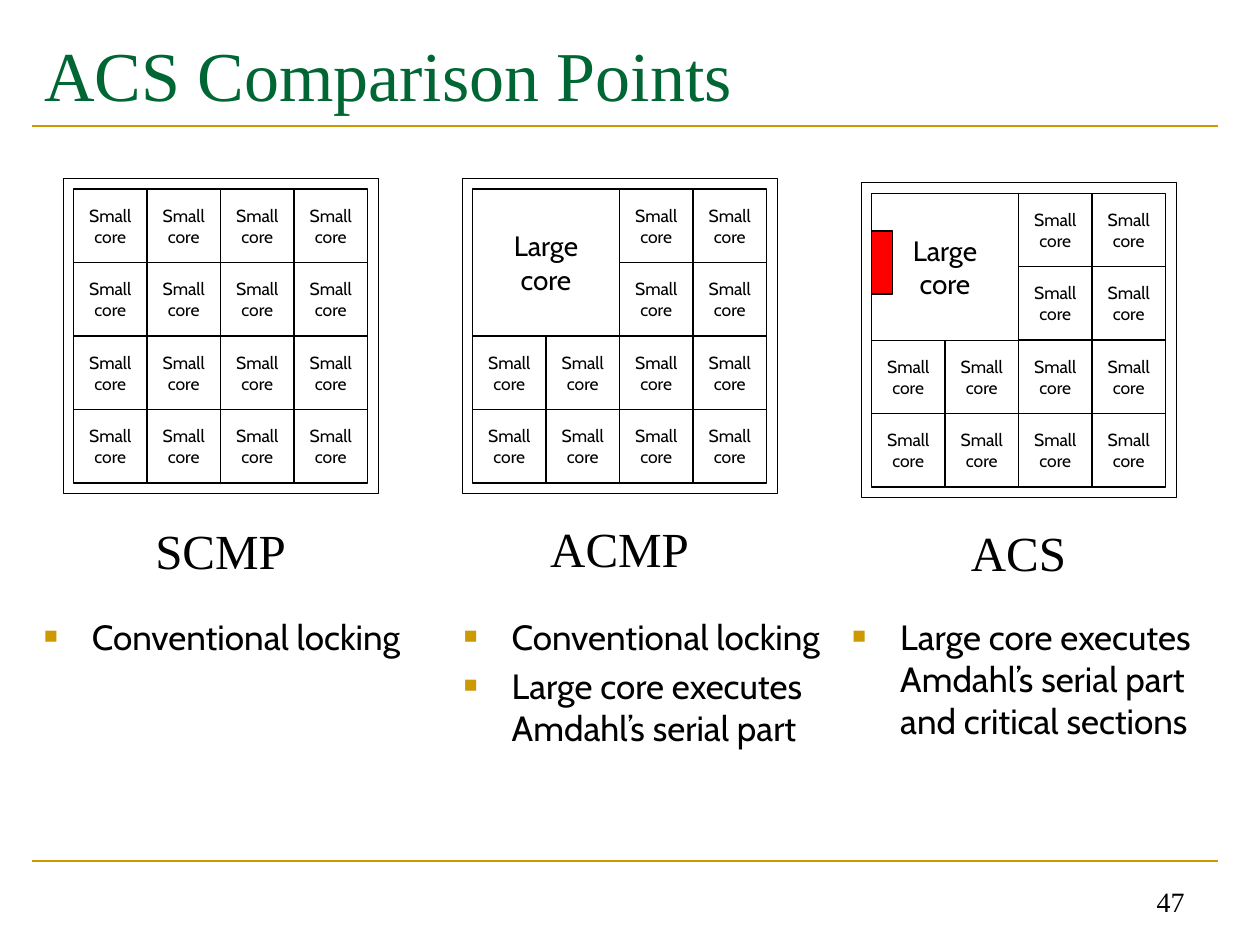
import lxml.etree
import pptx
import pptx.dml.color
import pptx.enum.shapes
import pptx.enum.text
import pptx.oxml.ns
import pptx.util

ALIGN = pptx.enum.text.PP_ALIGN
ANCHOR = pptx.enum.text.MSO_ANCHOR
RECTANGLE = pptx.enum.shapes.MSO_SHAPE.RECTANGLE
BLACK, GOLD, GREEN, WHITE, RED = "000000", "CC9900", "006633", "FFFFFF", "FF0000"
SERIF, SANS = "Times New Roman", "Cabin"
qn = pptx.oxml.ns.qn


def paint(target, color):
    """Give a fill, or the fill of a line or font, a solid hex colour."""
    fill = target if hasattr(target, "solid") else target.fill
    fill.solid()
    fill.fore_color.rgb = pptx.dml.color.RGBColor.from_string(color)


def write(shape, paragraphs, typeface, size, color=BLACK, frame_format=None, **paragraph_format):
    frame = shape.text_frame
    settings = {"word_wrap": True, "auto_size": pptx.enum.text.MSO_AUTO_SIZE.NONE,
                "vertical_anchor": ANCHOR.TOP, **(frame_format or {})}
    for name, value in settings.items():
        setattr(frame, name, value)
    for index, text in enumerate(paragraphs):
        paragraph = frame.add_paragraph() if index else frame.paragraphs[0]
        paragraph.text = text
        for name, value in paragraph_format.items():
            setattr(paragraph, name, value)
        for run in paragraph.runs:
            for name, value in {"name": typeface, "size": pptx.util.Pt(size)}.items():
                setattr(run.font, name, value)
            paint(run.font, color)


deck = pptx.Presentation()
deck.slide_width, deck.slide_height = pptx.util.Inches(10), pptx.util.Inches(7.5)
slide = deck.slides.add_slide(deck.slide_layouts[1])

# The page is a grid of 120 columns and 90 rows of square units
unit = deck.slide_width / 120
title, first_list = slide.placeholders
page_number, second_list, third_list = [
    slide.shapes.add_textbox(0, 0, 0, 0) for _ in range(3)]
text_areas = [
    (title, 3, 2, 113, 10),
    (page_number, 86, 82, 28, 6),
    (first_list, 3, 58, 37, 23.25),
    (second_list, 43, 58, 37, 23.25),
    (third_list, 80, 58, 37, 23.25),
]
for area, *box in text_areas:
    for side, length in zip(("left", "top", "width", "height"), box):
        setattr(area, side, round(length * unit))

write(title, ["ACS Comparison Points"], SERIF, 40, GREEN,
      {"vertical_anchor": ANCHOR.MIDDLE}, alignment=ALIGN.LEFT)
write(page_number, ["47"], SERIF, 16, BLACK,
      {"vertical_anchor": ANCHOR.BOTTOM}, alignment=ALIGN.RIGHT)

# Gold rules under the title and above the page number
for row in (12, 82):
    rule = slide.shapes.add_connector(
        pptx.enum.shapes.MSO_CONNECTOR.STRAIGHT,
        *[round(length * unit) for length in (3, row, 116, row)])
    paint(rule.line, GOLD)
    rule.line.width = pptx.util.Pt(1.5)
    lxml.etree.SubElement(rule.element.spPr, qn("a:effectLst"))

# Bulleted lists below the chips
lists = [
    (first_list, ["Conventional locking"]),
    (second_list, ["Conventional locking", "Large core executes Amdahl’s serial part"]),
    (third_list, ["Large core executes Amdahl’s serial part and critical sections"]),
]
for area, points in lists:
    write(area, points, SANS, 20, space_before=pptx.util.Pt(4), alignment=ALIGN.LEFT)
    for paragraph in area.text_frame.paragraphs:
        properties = paragraph._p.get_or_add_pPr()
        indent = pptx.util.Inches(0.38)
        properties.set("marL", str(indent))
        properties.set("indent", str(-indent))
        bullet_color = lxml.etree.SubElement(properties, qn("a:buClr"))
        lxml.etree.SubElement(bullet_color, qn("a:srgbClr"), val=GOLD)
        lxml.etree.SubElement(properties, qn("a:buSzPct"), val="65000")
        lxml.etree.SubElement(properties, qn("a:buFont"), typeface=SERIF)
        lxml.etree.SubElement(properties, qn("a:buChar"), char="■")

# Chips: 4 x 4 cells of 7 units inside a 1-unit border
cell = 7
centred = {"vertical_anchor": ANCHOR.MIDDLE, "word_wrap": False}
chips = [
    # name, left, top, caption top, has a large core
    ("ACMP", 44, 17, 48.75, True),
    ("ACS", 82, 17.4, 49.2, True),
    ("SCMP", 6, 17, 49, False),
]
for name, left, top, caption_top, has_large_core in chips:
    core_left, core_top = left + 1, top + 1
    # box, fill, line width, paragraphs, typeface, text size, frame format
    parts = [((left, top, 30, 30), None, 0.25, [], SANS, 10, centred)]
    for row in range(4):
        for column in range(4):
            if has_large_core and row < 2 and column < 2:
                continue
            box = (core_left + column * cell, core_top + row * cell, cell, cell)
            parts.append((box, None, 0.75, ["Small\ncore"], SANS, 10, centred))
    if has_large_core:
        box = (core_left, core_top, 2 * cell, 2 * cell)
        parts.append((box, None, 0.75, ["Large", "core"], SANS, 16, centred))
    parts.append(((core_left, caption_top, 4 * cell, 6.8), WHITE, 0, [name], SERIF, 28, {}))
    if name == "ACS":
        parts.append(((core_left, 22, 2, 6), RED, 0.75, [], SANS, 10, centred))

    chip = slide.shapes.add_group_shape()
    for box, fill, line_width, paragraphs, typeface, size, frame_format in parts:
        part = chip.shapes.add_shape(RECTANGLE, *[round(length * unit) for length in box])
        part.shadow.inherit = False
        if fill:
            paint(part.fill, fill)
        else:
            part.fill.background()
        if line_width:
            paint(part.line, BLACK)
            part.line.width = pptx.util.Pt(line_width)
        else:
            part.line.fill.background()
        write(part, paragraphs, typeface, size, BLACK, frame_format, alignment=ALIGN.CENTER)

deck.save("out.pptx")
